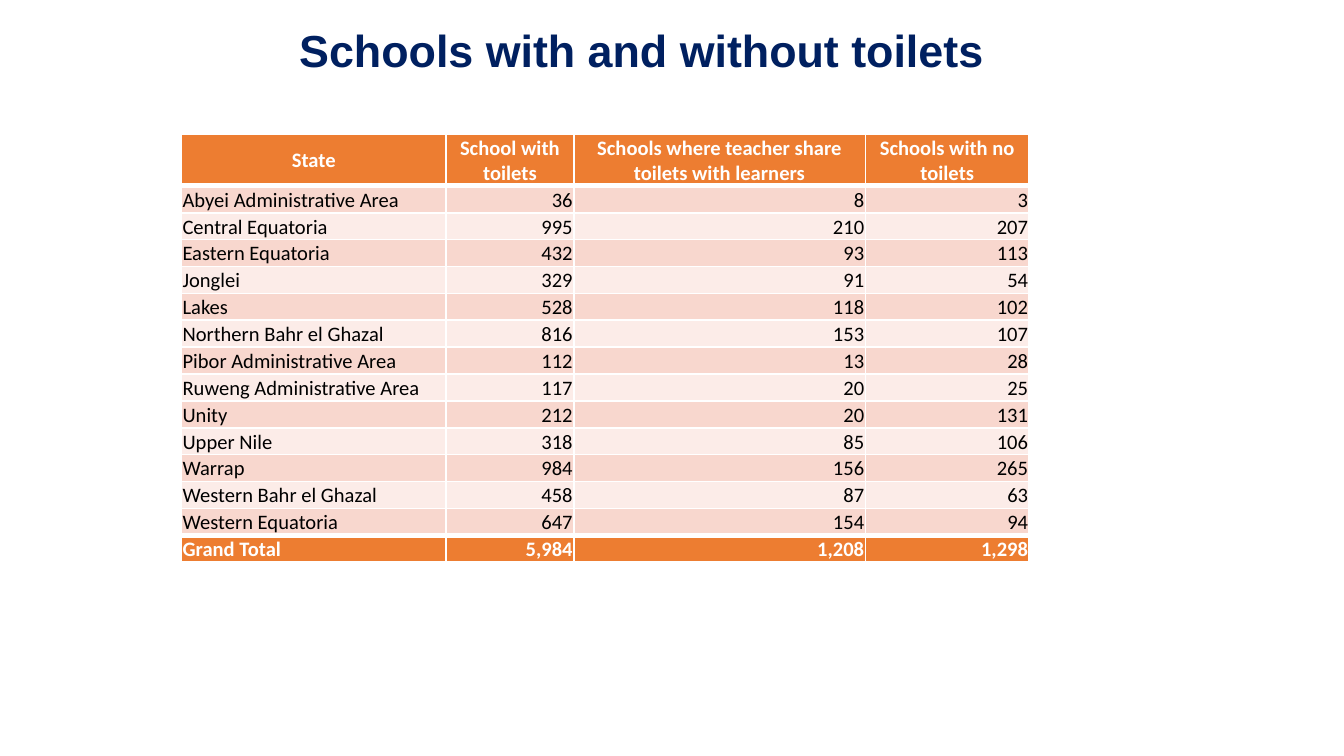
from dataclasses import dataclass

from lxml.etree import SubElement
from pptx import Presentation
from pptx.dml.color import RGBColor
from pptx.enum.text import MSO_ANCHOR as Anchor, PP_ALIGN as Align
from pptx.oxml.ns import qn
from pptx.util import Pt


@dataclass(frozen=True)
class Theme:
    navy: str = "002060"
    orange: str = "ED7D31"
    dark_band: str = "F8D7CE"
    light_band: str = "FCECE8"
    white: str = "FFFFFF"
    black: str = "000000"
    title_font: str = "Arial"
    table_font: str = "Calibri"
    title_size: float = 24
    table_size: float = 11
    thin_border: float = 1
    thick_border: float = 3


@dataclass(frozen=True)
class RowStyle:
    fill: str
    color: str
    bold: bool = False
    top: float = 1
    bottom: float = 1


@dataclass(frozen=True)
class StateRow:
    state: str
    with_toilets: int
    shared: int
    without_toilets: int

    def texts(self) -> list[str]:
        counts = (self.with_toilets, self.shared, self.without_toilets)
        return [self.state, *(f"{count:,}" for count in counts)]


THEME = Theme()
COLUMN_WIDTHS = (141.8, 68.4, 156.2, 87.8)
HEADER_HEIGHT, ROW_HEIGHT = 27.6, 14.4
HEADINGS = ["State", "School with toilets",
            "Schools where teacher share toilets with learners",
            "Schools with no toilets"]
STATES = [
    StateRow("Abyei Administrative Area", 36, 8, 3),
    StateRow("Central Equatoria", 995, 210, 207),
    StateRow("Eastern Equatoria", 432, 93, 113),
    StateRow("Jonglei", 329, 91, 54),
    StateRow("Lakes", 528, 118, 102),
    StateRow("Northern Bahr el Ghazal", 816, 153, 107),
    StateRow("Pibor Administrative Area", 112, 13, 28),
    StateRow("Ruweng Administrative Area", 117, 20, 25),
    StateRow("Unity", 212, 20, 131),
    StateRow("Upper Nile", 318, 85, 106),
    StateRow("Warrap", 984, 156, 265),
    StateRow("Western Bahr el Ghazal", 458, 87, 63),
    StateRow("Western Equatoria", 647, 154, 94),
]
TOTAL = StateRow("Grand Total", 5984, 1208, 1298)


def set_font(paragraph, name: str, size: float, color: str, bold: bool) -> None:
    font = paragraph.font
    font.name, font.size, font.bold = name, Pt(size), bold
    font.color.rgb = RGBColor.from_string(color)


def add_title(slide, text: str) -> None:
    frame = slide.shapes.add_textbox(Pt(12.2), Pt(3.6), Pt(669.6), Pt(49)).text_frame
    frame.word_wrap = True
    frame.vertical_anchor = Anchor.MIDDLE
    paragraph = frame.paragraphs[0]
    paragraph.text = text
    paragraph.alignment = Align.CENTER
    paragraph.line_spacing = 0.9
    paragraph.space_after = Pt(6)
    set_font(paragraph, THEME.title_font, THEME.title_size, THEME.navy, True)


def set_borders(cell, style: RowStyle) -> None:
    properties = cell._tc.get_or_add_tcPr()
    thin = THEME.thin_border
    for side, width in (("L", thin), ("R", thin), ("T", style.top), ("B", style.bottom)):
        line = SubElement(properties, qn(f"a:ln{side}"), w=str(Pt(width)))
        fill = SubElement(line, qn("a:solidFill"))
        SubElement(fill, qn("a:srgbClr"), val=THEME.white)


def fill_cell(cell, text: str, style: RowStyle, alignment: Align, anchor: Anchor) -> None:
    # Borders come before the fill in the cell properties
    set_borders(cell, style)
    cell.fill.solid()
    cell.fill.fore_color.rgb = RGBColor.from_string(style.fill)
    cell.margin_left = cell.margin_right = cell.margin_top = Pt(0.6)
    cell.margin_bottom = Pt(0)
    cell.vertical_anchor = anchor
    paragraph = cell.text_frame.paragraphs[0]
    paragraph.text = text
    paragraph.alignment = alignment
    set_font(paragraph, THEME.table_font, THEME.table_size, style.color, style.bold)


def add_state_table(slide) -> None:
    thick = THEME.thick_border
    header = RowStyle(THEME.orange, THEME.white, bold=True, bottom=thick)
    total = RowStyle(THEME.orange, THEME.white, bold=True, top=thick)
    bands = [RowStyle(fill, THEME.black) for fill in (THEME.dark_band, THEME.light_band)]
    rows = [(HEADINGS, header)]
    rows += [(state.texts(), bands[index % 2]) for index, state in enumerate(STATES)]
    rows.append((TOTAL.texts(), total))

    height = HEADER_HEIGHT + ROW_HEIGHT * (len(rows) - 1)
    table = slide.shapes.add_table(len(rows), len(COLUMN_WIDTHS), Pt(97.2), Pt(72),
                                   Pt(sum(COLUMN_WIDTHS)), Pt(height)).table
    table.first_row = table.horz_banding = False
    for column, width in zip(table.columns, COLUMN_WIDTHS):
        column.width = Pt(width)
    for row_index, (texts, style) in enumerate(rows):
        is_header = row_index == 0
        table.rows[row_index].height = Pt(HEADER_HEIGHT if is_header else ROW_HEIGHT)
        anchor = Anchor.MIDDLE if is_header else Anchor.BOTTOM
        for column_index, text in enumerate(texts):
            body_alignment = Align.RIGHT if column_index else Align.LEFT
            alignment = Align.CENTER if is_header else body_alignment
            fill_cell(table.cell(row_index, column_index), text, style, alignment, anchor)


def main() -> None:
    presentation = Presentation()
    presentation.slide_width, presentation.slide_height = Pt(720), Pt(405)
    slide = presentation.slides.add_slide(presentation.slide_layouts[6])
    add_title(slide, "Schools with and without toilets ")
    add_state_table(slide)
    presentation.save("out.pptx")


if __name__ == "__main__":
    main()
